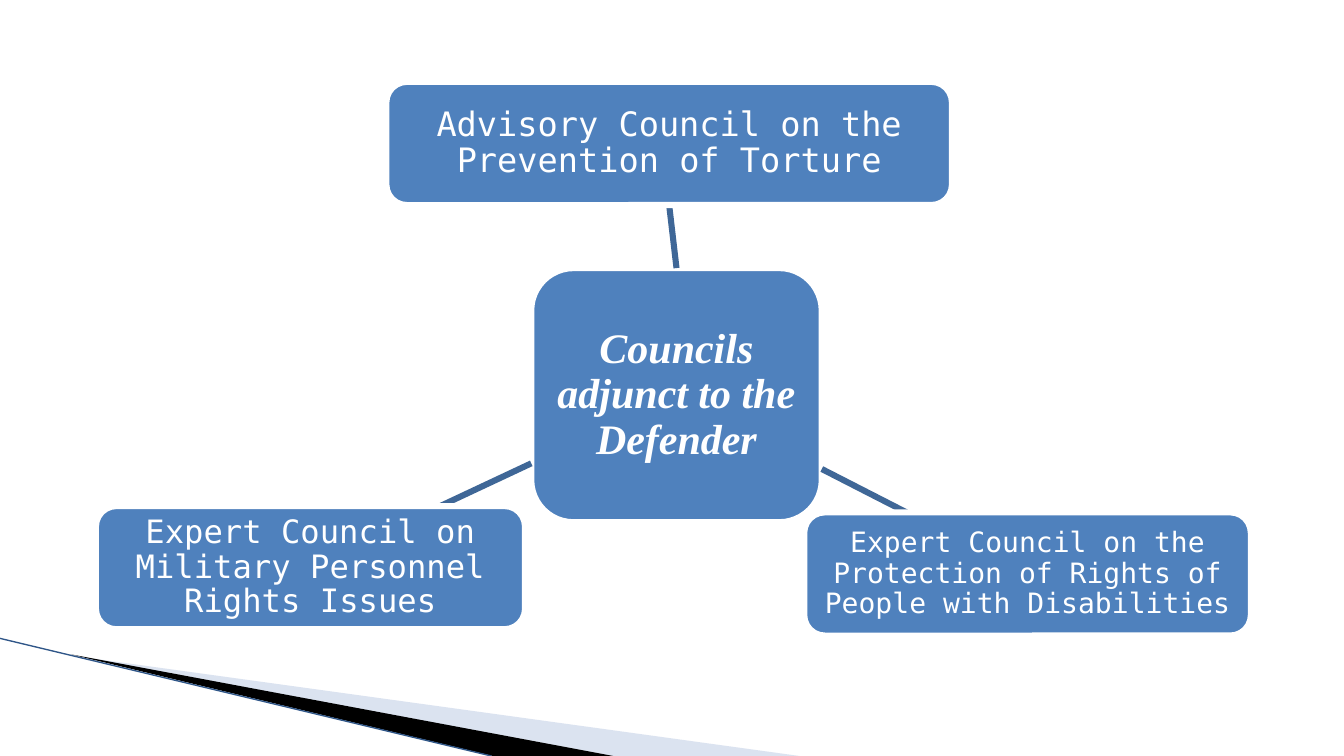
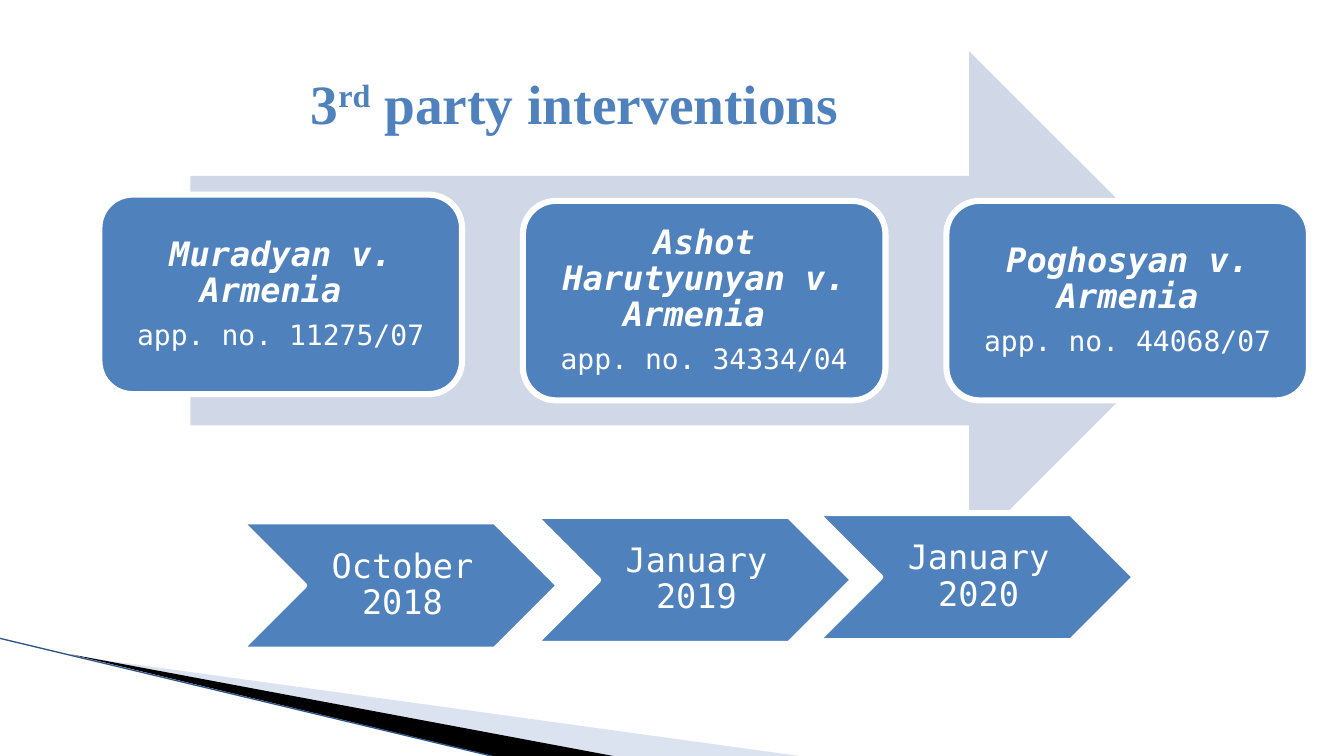
from lxml import etree
from pptx import Presentation
from pptx.dml.color import RGBColor
from pptx.enum import shapes, text
from pptx.oxml.ns import qn
from pptx.util import Pt

BLUE = RGBColor(0x4F, 0x81, 0xBD)
LINK_BLUE = RGBColor(0x3F, 0x67, 0x97)
ARROW_BLUE = RGBColor(0xD0, 0xD8, 0xE8)
WEDGE_BLUE = RGBColor(0xA7, 0xB9, 0xDB)
EDGE_BLUE = RGBColor(0x2F, 0x56, 0x88)
BLACK = RGBColor(0, 0, 0)
WHITE = RGBColor(0xFF, 0xFF, 0xFF)
MONO, SERIF = "DejaVu Sans Mono", "Times New Roman"
OUTLINE = 4.33
GEOMETRY = shapes.MSO_SHAPE

# Content: all places are (left, top, width, height) or (x, y) in points
HUB = ("Councils adjunct to the Defender", (379.5, 191.5, 207.5, 181.5))
COUNCILS = [  # name, place, size, link start, link end, joined at side middles
    ("Advisory Council on the Prevention of Torture",
     (276, 58.5, 404, 88), 24, (480, 191.5), (479, 147), True),
    ("Expert Council on the Protection of Rights of People with Disabilities",
     (574.5, 366, 319, 88), 20, (587, 335), (647.5, 366), False),
    ("Expert Council on Military Personnel Rights Issues",
     (68.5, 361.5, 306.5, 88), 23, (379.5, 331), (314.5, 361.5), False),
]
TITLE = [("3", False), ("rd", True), (" party interventions", False)]
CASES = [  # name, application, top
    ("Muradyan v. Armenia ", "app. no. 11275/07", 139),
    ("Ashot Harutyunyan v. Armenia ", "app. no. 34334/04", 143.5),
    ("Poghosyan v. Armenia", "app. no. 44068/07", 143.5),
]
CASE_LEFT, CASE_STEP, CASE_WIDTH, CASE_HEIGHT = 71, 302.5, 259, 142.5
DATES = [("October 2018", 171.5, 372.5), ("January 2019", 381.5, 368.5),
         ("January 2020", 583, 366.5)]
DATE_WIDTH, DATE_HEIGHT = 228, 91.5
WEDGES = [  # corners, colour, opacity in percent
    ([(52.5, 468.5), (571, 540), (438, 540)], WEDGE_BLUE, 40),
    ([(51, 467.5), (438, 540), (352, 540)], BLACK, 100),
]
WEDGE_EDGE = (0, 456), (351, 540)


def points(values):
    return [Pt(value) for value in values]


def add_run(paragraph, words, size=24, font=MONO, color=WHITE, bold=False,
            italic=False, raised=False):
    run = paragraph.add_run()
    run.text = words
    run.font.size, run.font.name = Pt(size), font
    run.font.bold, run.font.italic = bold, italic
    run.font.color.rgb = color
    if raised:
        run.font._element.set("baseline", "30000")


def set_frame(frame, margins):
    frame.word_wrap = True
    frame.auto_size = text.MSO_AUTO_SIZE.NONE
    frame.vertical_anchor = text.MSO_ANCHOR.MIDDLE
    (frame.margin_left, frame.margin_top,
     frame.margin_right, frame.margin_bottom) = points(margins)


def paint(shape, fill, outline=None):
    shape.shadow.inherit = False
    shape.fill.solid()
    shape.fill.fore_color.rgb = fill
    if outline is None:
        shape.line.fill.background()
    else:
        shape.line.color.rgb = outline
        shape.line.width = Pt(OUTLINE)


def add_box(slide, geometry, place, lines, margins):
    """Blue shape with a white outline; lines holds (words, format) pairs."""
    box = slide.shapes.add_shape(geometry, *points(place))
    paint(box, BLUE, WHITE)
    set_frame(box.text_frame, margins)
    for number, (words, style) in enumerate(lines):
        paragraph = (box.text_frame.add_paragraph() if number
                     else box.text_frame.paragraphs[0])
        paragraph.alignment = text.PP_ALIGN.CENTER
        paragraph.line_spacing = 0.9
        paragraph.space_after = Pt(8.4)
        add_run(paragraph, words, **style)
    return box


def add_line(slide, start, end, color, width):
    line = slide.shapes.add_connector(shapes.MSO_CONNECTOR.STRAIGHT,
                                      *points(start + end))
    line.line.color.rgb = color
    line.line.width = Pt(width)
    etree.SubElement(line._element.spPr, qn("a:effectLst"))
    return line


def move_wedges_to_master(prs, slide):
    """Draw the corner decoration once and hand it to the slide master."""
    parts = []
    for corners, color, opacity in WEDGES:
        builder = slide.shapes.build_freeform(*points(corners[0]))
        builder.add_line_segments([points(corner) for corner in corners[1:]])
        wedge = builder.convert_to_shape()
        paint(wedge, color)
        if opacity < 100:
            fill = wedge._element.spPr.find(qn("a:solidFill"))
            etree.SubElement(fill[0], qn("a:alpha"), val=str(opacity * 1000))
        parts.append(wedge)
    parts.append(add_line(slide, *WEDGE_EDGE, EDGE_BLUE, 0.95))
    for part in parts:
        prs.slide_master.shapes.element.append(part._element)


def build_councils(slide):
    name, place = HUB
    hub = add_box(slide, GEOMETRY.ROUNDED_RECTANGLE, place,
                  [(name, dict(size=30, font=SERIF, bold=True, italic=True))],
                  [6] * 4)
    for name, place, size, start, end, joined in COUNCILS:
        link = add_line(slide, start, end, LINK_BLUE, OUTLINE)
        council = add_box(slide, GEOMETRY.ROUNDED_RECTANGLE, place,
                          [(name, dict(size=size))], [4.5] * 4)
        if joined:
            link.begin_connect(hub, 0)
            link.end_connect(council, 2)


def build_interventions(slide):
    # Background arrow
    arrow = slide.shapes.add_shape(GEOMETRY.RIGHT_ARROW,
                                   *points((136, 36.5, 734.5, 356.5)))
    paint(arrow, ARROW_BLUE)

    # Cases
    for number, (name, application, top) in enumerate(CASES):
        place = (CASE_LEFT + number * CASE_STEP, top, CASE_WIDTH, CASE_HEIGHT)
        add_box(slide, GEOMETRY.ROUNDED_RECTANGLE, place,
                [(name, dict(bold=True, italic=True)),
                 (application, dict(size=20))], [7] * 4)

    # Dates
    for date, left, top in DATES:
        add_box(slide, GEOMETRY.CHEVRON, (left, top, DATE_WIDTH, DATE_HEIGHT),
                [(date, {})], (7, 3, 3, 3))

    # Title, in front of the arrow
    title = slide.shapes.title
    title.left, title.top, title.width, title.height = points((0, 50, 821, 46))
    set_frame(title.text_frame, (7, 3.5, 7, 3.5))
    heading = title.text_frame.paragraphs[0]
    heading.alignment = text.PP_ALIGN.CENTER
    for words, raised in TITLE:
        add_run(heading, words, size=39.6, font=SERIF, color=BLUE, bold=True,
                raised=raised)
    slide.shapes.element.append(title._element)


def main():
    prs = Presentation()
    prs.slide_width, prs.slide_height = Pt(960), Pt(540)
    title_only, blank = prs.slide_layouts[5], prs.slide_layouts[6]
    councils = prs.slides.add_slide(blank)
    move_wedges_to_master(prs, councils)
    build_councils(councils)
    build_interventions(prs.slides.add_slide(title_only))
    prs.save("out.pptx")


if __name__ == "__main__":
    main()
